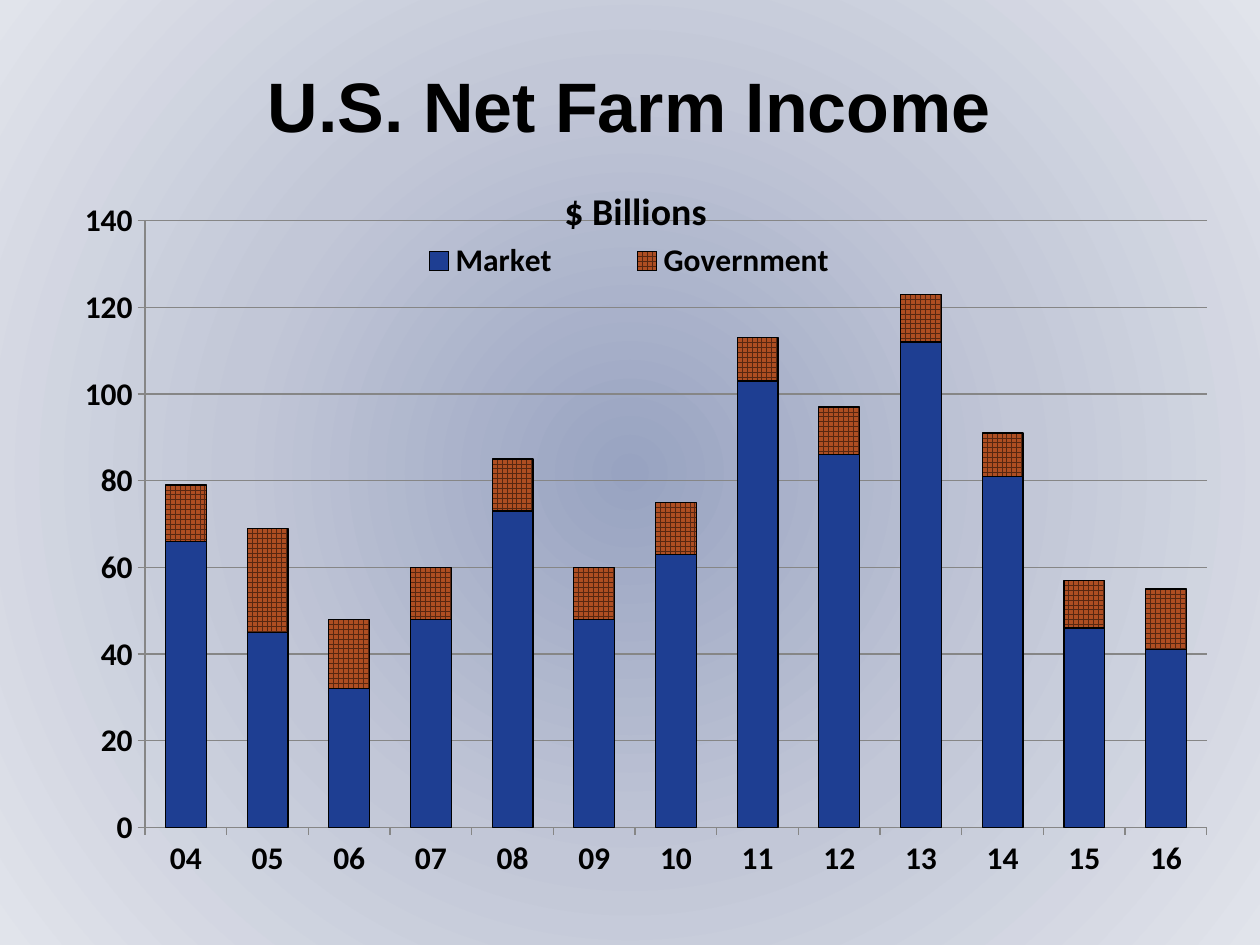
"""Build a slide with a stacked column chart of U.S. net farm income."""
from lxml.etree import SubElement
from pptx import Presentation
from pptx.chart.data import CategoryChartData
from pptx.dml.color import RGBColor
from pptx.enum.chart import XL_CHART_TYPE as ChartType
from pptx.enum.chart import XL_LEGEND_POSITION as LegendPosition
from pptx.enum.chart import XL_TICK_LABEL_POSITION as LabelPosition
from pptx.enum.chart import XL_TICK_MARK as TickMark
from pptx.enum.dml import MSO_PATTERN as Pattern
from pptx.enum.text import MSO_ANCHOR as Anchor
from pptx.enum.text import PP_ALIGN as Align
from pptx.oxml import parse_xml
from pptx.oxml.ns import nsdecls, qn
from pptx.util import Inches, Pt

COLORS = {
    "center": "98A3C1", "middle": "C2C7D7", "edge": "E1E4EB",
    "black": "000000", "axis": "868686", "market": "1E3E92",
    "government": "AE4E22", "grid pattern": "572711",
}
YEARS = [f"{year:02d}" for year in range(4, 17)]
INCOME = {
    "Market": (66, 45, 32, 48, 73, 48, 63, 103, 86, 112, 81, 46, 41),
    "Government": (13, 24, 16, 12, 12, 12, 12, 10, 11, 11, 10, 11, 14),
}


def rgb(name):
    """Return the named colour."""
    return RGBColor.from_string(COLORS[name])


def set_layout(parent, following, values):
    """Place a chart part by fractions of the chart area."""
    for old_layout in parent.findall(qn("c:layout")):
        parent.remove(old_layout)
    layout = parse_xml(f"<c:layout {nsdecls('c')}/>")
    manual = SubElement(layout, qn("c:manualLayout"))
    for tag, value in values.items():
        SubElement(manual, qn(f"c:{tag}")).set("val", str(value))
    parent.find(qn(following)).addprevious(layout)


presentation = Presentation()
presentation.slide_width = Inches(10)
presentation.slide_height = Inches(7.5)
slide = presentation.slides.add_slide(presentation.slide_layouts[5])

slide.background.fill.solid()
solid_fill = slide.background._cSld.find(".//" + qn("a:solidFill"))
stops = "".join(
    f'<a:gs pos="{position}"><a:srgbClr val="{COLORS[name]}"/></a:gs>'
    for position, name in ((0, "center"), (50000, "middle"), (100000, "edge"))
)
gradient = parse_xml(
    f'<a:gradFill {nsdecls("a")} rotWithShape="1"><a:gsLst>{stops}</a:gsLst>'
    '<a:path path="circle"><a:fillToRect l="50000" t="50000" r="50000" b="50000"/>'
    "</a:path></a:gradFill>"
)
solid_fill.getparent().replace(solid_fill, gradient)

title = slide.shapes.title
title.left, title.top = Inches(0.25), Inches(0.33)
title.width, title.height = Inches(9.49), Inches(1)
title.text_frame.text = "U.S. Net Farm Income"
title.text_frame.vertical_anchor = Anchor.MIDDLE
paragraph = title.text_frame.paragraphs[0]
paragraph.alignment = Align.CENTER
title_font = paragraph.runs[0].font

chart_data = CategoryChartData()
chart_data.categories = YEARS
for name, values in INCOME.items():
    chart_data.add_series(name, values)
chart = slide.shapes.add_chart(
    ChartType.COLUMN_STACKED, Inches(0.25), Inches(1.17),
    Inches(9.49), Inches(5.99), chart_data,
).chart

chart.has_title = True
chart.chart_title.text_frame.text = "$ Billions"
chart.chart_title.include_in_layout = False
chart.has_legend = True
chart.legend.position = LegendPosition.TOP
chart.legend.include_in_layout = False
chart_title_font = chart.chart_title.text_frame.paragraphs[0].runs[0].font

for font, family, size in (
    (title_font, "Arial", 40),
    (chart.font, "Calibri", 18),
    (chart_title_font, "Calibri", 21.6),
):
    for attribute, value in {"name": family, "size": Pt(size), "bold": True}.items():
        setattr(font, attribute, value)
    font.color.rgb = rgb("black")

plot = chart.plots[0]
for target, settings in (
    (plot, {"gap_width": 100, "overlap": 100, "vary_by_categories": False}),
    (chart.category_axis, {
        "tick_label_position": LabelPosition.LOW,
        "major_tick_mark": TickMark.OUTSIDE,
        "minor_tick_mark": TickMark.NONE,
        "has_major_gridlines": False,
    }),
    (chart.value_axis, {
        "minimum_scale": 0, "maximum_scale": 140, "major_unit": 20,
        "major_tick_mark": TickMark.OUTSIDE,
        "minor_tick_mark": TickMark.NONE,
        "has_major_gridlines": True,
    }),
):
    for attribute, value in settings.items():
        setattr(target, attribute, value)

for axis_part in (
    chart.category_axis, chart.value_axis, chart.value_axis.major_gridlines,
):
    axis_part.format.line.color.rgb = rgb("axis")
    axis_part.format.line.width = Pt(0.75)

market, government = plot.series
market.format.fill.solid()
market.format.fill.fore_color.rgb = rgb("market")
government_fill = government.format.fill
government_fill.patterned()
government_fill.pattern = Pattern.LARGE_GRID
government_fill.fore_color.rgb = rgb("grid pattern")
government_fill.back_color.rgb = rgb("government")
for series in (market, government):
    series.invert_if_negative = False
    series.format.line.color.rgb = rgb("black")
    series.format.line.width = Pt(0.75)

plot_area = chart._chartSpace.chart.plotArea
set_layout(plot_area, "c:barChart", {
    "layoutTarget": "inner", "xMode": "edge", "yMode": "edge",
    "x": 0.095, "y": 0.097, "w": 0.888, "h": 0.804,
})
set_layout(chart.chart_title._element, "c:overlay", {
    "xMode": "edge", "yMode": "edge", "x": 0.44, "y": 0.04,
})
set_layout(chart.legend._element, "c:overlay", {
    "xMode": "edge", "yMode": "edge", "x": 0.27, "y": 0.11, "w": 0.46, "h": 0.08,
})

presentation.save("out.pptx")
